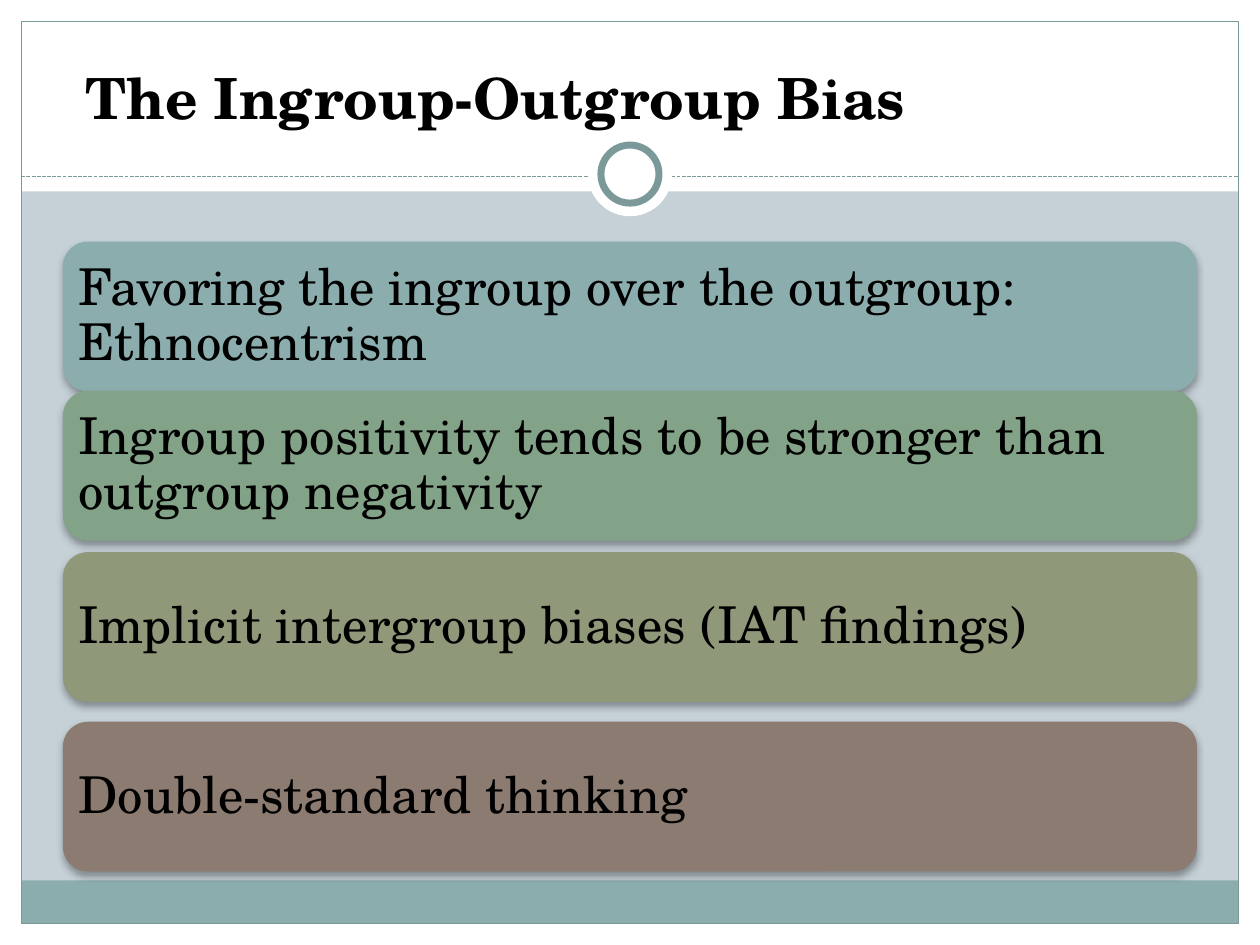
from dataclasses import dataclass

from lxml import etree
from pptx import Presentation
from pptx import util as u
from pptx.dml.color import RGBColor
from pptx.enum import dml, shapes, text
from pptx.oxml.ns import qn


@dataclass(frozen=True)
class Theme:
    font: str = "TeX Gyre Schola"
    background: str = "C5D1D7"
    paper: str = "FFFFFF"
    ink: str = "000000"
    accent: str = "7C999A"
    footer: str = "8CADAE"
    cards: tuple = ("8CADAE", "82A387", "8F9879", "8C7B70")
    title_size: float = 32.4
    card_size: float = 29


WIDTH, HEIGHT = 25.4, 19.05
MARGIN = 0.43
RULE_TOP = 3.56
CARD_LEFT, CARD_HEIGHT = 1.27, 3.02
CARDS = (
    (4.87, "Favoring the ingroup over the outgroup: Ethnocentrism"),
    (7.88, "Ingroup positivity tends to be stronger than outgroup negativity"),
    (11.13, "Implicit intergroup biases (IAT findings)"),
    (14.55, "Double-standard thinking"),
)


class SlideBuilder:
    def __init__(self, slide, theme):
        self.slide = slide
        self.theme = theme
        fill = slide.background.fill
        fill.solid()
        fill.fore_color.rgb = RGBColor.from_string(theme.background)

    def shape(self, kind, left, top, width, height, fill=None, line=None, line_width=0.75):
        shape = self.slide.shapes.add_shape(kind, *map(u.Cm, (left, top, width, height)))
        shape.shadow.inherit = False
        if fill:
            shape.fill.solid()
            shape.fill.fore_color.rgb = RGBColor.from_string(fill)
        else:
            shape.fill.background()
        if line:
            shape.line.color.rgb = RGBColor.from_string(line)
            shape.line.width = u.Pt(line_width)
        else:
            shape.line.fill.background()
        return shape

    def rectangle(self, *box, **style):
        return self.shape(shapes.MSO_SHAPE.RECTANGLE, *box, **style)

    def circle(self, center_y, diameter, **style):
        """Draw a circle on the vertical centre line of the slide."""
        radius = diameter / 2
        return self.shape(shapes.MSO_SHAPE.OVAL, WIDTH / 2 - radius, center_y - radius,
                          diameter, diameter, **style)

    def dashed_rule(self, left, right, top):
        rule = self.slide.shapes.add_connector(
            shapes.MSO_CONNECTOR.STRAIGHT, *map(u.Cm, (left, top, right, top)))
        rule.line.color.rgb = RGBColor.from_string(self.theme.accent)
        rule.line.width = u.Pt(0.75)
        rule.line.dash_style = dml.MSO_LINE.SQUARE_DOT
        etree.SubElement(rule._element.spPr, qn("a:effectLst"))

    def set_text(self, shape, wording, size, frame_format, paragraph_format, bold=False):
        frame = shape.text_frame
        frame.text = wording
        paragraph = frame.paragraphs[0]
        font = paragraph.runs[0].font
        font_format = {"name": self.theme.font, "size": u.Pt(size), "bold": bold}
        for target, values in ((frame, frame_format), (paragraph, paragraph_format),
                               (font, font_format)):
            for name, value in values.items():
                setattr(target, name, value)
        font.color.rgb = RGBColor.from_string(self.theme.ink)

    def title(self, wording, *box):
        shape = self.slide.shapes.add_textbox(*map(u.Cm, box))
        self.set_text(shape, wording, self.theme.title_size,
                      {"word_wrap": True, "vertical_anchor": text.MSO_ANCHOR.BOTTOM},
                      {"alignment": text.PP_ALIGN.LEFT}, bold=True)

    def card(self, wording, top, color):
        shape = self.shape(shapes.MSO_SHAPE.ROUNDED_RECTANGLE, CARD_LEFT, top,
                           WIDTH - 2 * CARD_LEFT, CARD_HEIGHT, fill=color)
        self.soft_shadow(shape)
        inset = u.Cm(0.16)
        frame_format = {"word_wrap": True, "vertical_anchor": text.MSO_ANCHOR.MIDDLE}
        for side in ("left", "top", "right", "bottom"):
            frame_format[f"margin_{side}"] = inset
        self.set_text(shape, wording, self.theme.card_size, frame_format,
                      {"alignment": text.PP_ALIGN.LEFT, "line_spacing": 0.9})

    def soft_shadow(self, shape):
        effects = shape._element.spPr.find(qn("a:effectLst"))
        shadow = etree.SubElement(effects, qn("a:outerShdw"), blurRad=str(u.Pt(4)),
                                  dist=str(u.Pt(2)), dir="5400000", rotWithShape="0")
        color = etree.SubElement(shadow, qn("a:srgbClr"), val=self.theme.ink)
        etree.SubElement(color, qn("a:alpha"), val="35000")


def main():
    theme = Theme()
    presentation = Presentation()
    presentation.slide_width, presentation.slide_height = u.Cm(WIDTH), u.Cm(HEIGHT)
    slide = presentation.slides.add_slide(presentation.slide_layouts[6])
    builder = SlideBuilder(slide, theme)

    inner_width = WIDTH - 2 * MARGIN
    paper_edges = (
        (0, HEIGHT - MARGIN, WIDTH, MARGIN),
        (0, 0, WIDTH, 3.86),
        (0, 0, MARGIN, HEIGHT),
        (WIDTH - MARGIN, 0, MARGIN, HEIGHT),
    )
    for box in paper_edges:
        builder.rectangle(*box, fill=theme.paper)
    builder.rectangle(MARGIN, 17.75, inner_width, 0.87, fill=theme.footer)
    builder.rectangle(MARGIN, MARGIN, inner_width, HEIGHT - 2 * MARGIN, line=theme.accent)

    builder.dashed_rule(MARGIN, WIDTH - MARGIN, RULE_TOP)
    builder.circle(3.51, 1.7, fill=theme.paper)
    builder.circle(3.51, 1.17, fill=theme.paper, line=theme.accent, line_width=4)

    builder.title("The Ingroup-Outgroup Bias", 1.47, 1.07, 22.43, 1.7)
    for (top, wording), color in zip(CARDS, theme.cards):
        builder.card(wording, top, color)

    presentation.save("out.pptx")


if __name__ == "__main__":
    main()
